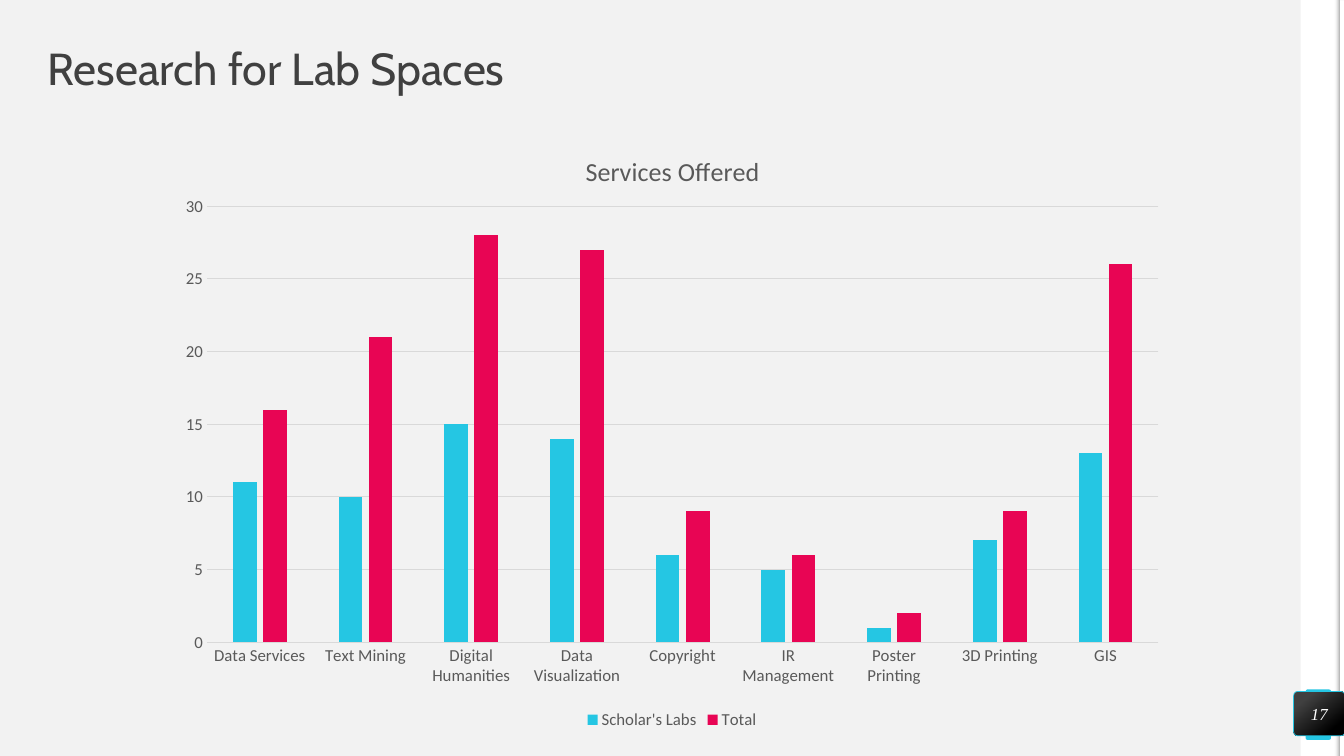
"""Build the Research for Lab Spaces slide with its services chart."""
from dataclasses import dataclass
from typing import Optional

from lxml import etree
from pptx import Presentation
from pptx import util as u
from pptx.chart.data import CategoryChartData
from pptx.dml.color import RGBColor
from pptx.enum import chart as ch, shapes, text
from pptx.oxml.ns import qn


@dataclass(frozen=True)
class Theme:
    back: str = "F2F2F2"
    white: str = "FFFFFF"
    cyan: str = "25C6E3"
    pink: str = "E80554"
    dark: str = "404040"
    black: str = "000000"
    shade: str = "A6A6A6"
    label: str = "595959"
    grid: str = "D9D9D9"
    title_font: str = "Cabin"
    chart_font: str = "Calibri"
    number_font: str = "Times New Roman"
    title_size: float = 32
    chart_title_size: float = 18.6
    small_size: float = 12


@dataclass(frozen=True)
class Stop:
    position: float
    color: str
    alpha: Optional[int] = None


@dataclass(frozen=True)
class Panel:
    box: tuple[float, float, float, float]
    fill: Optional[str] = None
    stops: tuple[Stop, ...] = ()
    angle: float = 0
    rotation: float = 0
    radius: Optional[float] = None
    line: Optional[str] = None


@dataclass(frozen=True)
class Series:
    name: str
    values: tuple[int, ...]
    color: str


T = Theme()
PANELS = (
    Panel((12.9, 0, 0.39, 7.5), T.white),
    Panel((12.95, 6.84, 0.25, 0.5), T.cyan, radius=0.074),
    Panel((9.56, 3.73, 7.5, 0.05), T.white, rotation=90),
    Panel((9.51, 3.73, 7.5, 0.05), rotation=90, angle=90,
          stops=(Stop(0, T.back, 0), Stop(1, T.shade))),
)
BADGE = Panel((12.83, 6.86, 0.51, 0.44), angle=310, radius=0.095, line=T.cyan,
              stops=(Stop(0.2, T.dark), Stop(0.82, T.black)))
SERVICES = ("Data Services", "Text Mining", "Digital Humanities", "Data Visualization",
            "Copyright", "IR Management", "Poster Printing", "3D Printing", "GIS")
SERIES = (
    Series("Scholar's Labs", (11, 10, 15, 14, 6, 5, 1, 7, 13), T.cyan),
    Series("Total", (16, 21, 28, 27, 9, 6, 2, 9, 26), T.pink),
)


def rgb(color: str) -> RGBColor:
    return RGBColor.from_string(color)


def inches(box: tuple) -> list:
    return [u.Inches(v) for v in box]


def style_font(font, name: str, size: float, color: str) -> None:
    font.name, font.size, font.bold = name, u.Pt(size), False
    font.color.rgb = rgb(color)


def clear_margins(tf) -> None:
    tf.margin_left = tf.margin_top = tf.margin_right = tf.margin_bottom = 0
    tf.vertical_anchor = text.MSO_ANCHOR.MIDDLE
    tf.word_wrap = True


def add_panel(s, panel: Panel):
    rounded = panel.radius is not None
    kind = shapes.MSO_SHAPE.ROUNDED_RECTANGLE if rounded else shapes.MSO_SHAPE.RECTANGLE
    sp = s.shapes.add_shape(kind, *inches(panel.box))
    sp.shadow.inherit = False
    sp.rotation = panel.rotation
    if rounded:
        sp.adjustments[0] = panel.radius
    if panel.stops:
        sp.fill.gradient()
        sp.fill.gradient_angle = panel.angle
        elements = sp.element.iter(qn("a:gs"))
        for stop, gs, element in zip(panel.stops, sp.fill.gradient_stops, elements):
            gs.position, gs.color.rgb = stop.position, rgb(stop.color)
            if stop.alpha is not None:
                etree.SubElement(element[0], qn("a:alpha"), val=str(stop.alpha))
    else:
        sp.fill.solid()
        sp.fill.fore_color.rgb = rgb(panel.fill)
    if panel.line:
        sp.line.color.rgb, sp.line.width = rgb(panel.line), u.Pt(0.5)
    else:
        sp.line.fill.background()
    return sp


def add_title(s, words: str) -> None:
    sp = s.shapes.title
    sp.left, sp.top, sp.width, sp.height = inches((0.47, 0.47, 12.39, 0.47))
    tf = sp.text_frame
    clear_margins(tf)
    tf.auto_size = text.MSO_AUTO_SIZE.NONE
    p = tf.paragraphs[0]
    p.alignment, p.line_spacing = text.PP_ALIGN.LEFT, 0.9
    r = p.add_run()
    r.text = words
    style_font(r.font, T.title_font, T.title_size, T.dark)


def add_badge(s, number: str) -> None:
    tf = add_panel(s, BADGE).text_frame
    clear_margins(tf)
    p = tf.paragraphs[0]
    p.alignment = text.PP_ALIGN.CENTER
    r = p.add_run()
    r.text = number
    style_font(r.font, T.number_font, T.small_size, T.white)
    r.font.italic = True


def place(parent, index: int, **settings) -> None:
    """Give a chart part a manual layout."""
    for old in parent.findall(qn("c:layout")):
        parent.remove(old)
    layout = etree.Element(qn("c:layout"))
    parent.insert(index, layout)
    manual = etree.SubElement(layout, qn("c:manualLayout"))
    for name, value in settings.items():
        etree.SubElement(manual, qn(f"c:{name}"), val=str(value))


def add_services_chart(s) -> None:
    data = CategoryChartData()
    data.categories = SERVICES
    for series in SERIES:
        data.add_series(series.name, series.values)
    chart = s.shapes.add_chart(ch.XL_CHART_TYPE.COLUMN_CLUSTERED,
                               *inches((1.64, 1.23, 10.05, 6.05)), data).chart
    style_font(chart.font, T.chart_font, T.small_size, T.label)

    chart.has_title = True
    r = chart.chart_title.text_frame.paragraphs[0].add_run()
    r.text = "Services Offered"
    style_font(r.font, T.chart_font, T.chart_title_size, T.label)
    chart.chart_title.include_in_layout = False
    place(next(chart.element.iter(qn("c:title"))), 1,
          xMode="edge", yMode="edge", x=0.41, y=0.04)
    place(next(chart.element.iter(qn("c:plotArea"))), 0, layoutTarget="inner",
          xMode="edge", yMode="edge", x=0.041, y=0.135, w=0.939, h=0.715)

    chart.has_legend = True
    chart.legend.position = ch.XL_LEGEND_POSITION.BOTTOM
    chart.legend.include_in_layout = False
    style_font(chart.legend.font, T.chart_font, T.small_size, T.label)

    plot = chart.plots[0]
    plot.gap_width, plot.overlap, plot.vary_by_categories = 219, -27, False
    for bars, series in zip(plot.series, SERIES):
        bars.format.fill.solid()
        bars.format.fill.fore_color.rgb = rgb(series.color)

    for axis in (chart.category_axis, chart.value_axis):
        axis.major_tick_mark = axis.minor_tick_mark = ch.XL_TICK_MARK.NONE
        style_font(axis.tick_labels.font, T.chart_font, T.small_size, T.label)
    values = chart.value_axis
    values.minimum_scale, values.maximum_scale, values.major_unit = 0, 30, 5
    values.format.line.fill.background()
    for line in (chart.category_axis.format.line, values.major_gridlines.format.line):
        line.color.rgb, line.width = rgb(T.grid), u.Pt(0.75)


def main() -> None:
    prs = Presentation()
    prs.slide_width, prs.slide_height = u.Inches(13.33), u.Inches(7.5)
    s = prs.slides.add_slide(prs.slide_layouts.get_by_name("Title Only"))
    s.background.fill.solid()
    s.background.fill.fore_color.rgb = rgb(T.back)
    for panel in PANELS:
        add_panel(s, panel)
    add_title(s, "Research for Lab Spaces")
    add_badge(s, "17")
    add_services_chart(s)
    prs.save("out.pptx")


if __name__ == "__main__":
    main()
